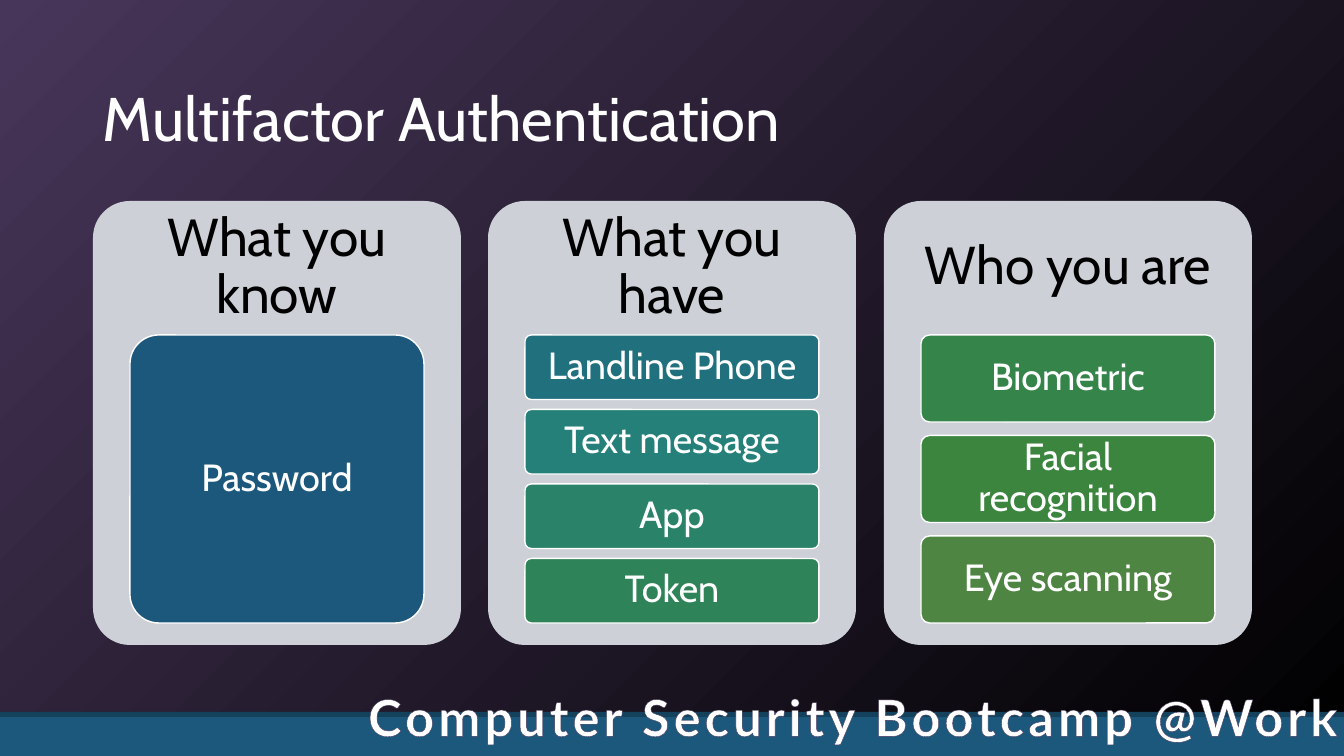
"""Build the Multifactor Authentication slide."""
from lxml import etree
from pptx import Presentation
from pptx.dml.color import RGBColor
from pptx.enum.shapes import MSO_SHAPE as SHAPE
from pptx.enum.text import MSO_ANCHOR as ANCHOR, PP_ALIGN as ALIGN
from pptx.oxml import parse_xml
from pptx.oxml.ns import nsdecls
from pptx.util import Pt

PX = 914400 / 100.8
COLORS = {
    "purple": "48365A", "black": "000000", "white": "FFFFFF",
    "blue": "1B587C", "navy": "14425D", "card": "CDD1D7",
    "cyan": "20707E", "teal": "25807A", "sea": "2A8268", "jade": "2F8358",
    "green": "35844A", "leaf": "3C853F", "olive": "4E8542",
}
CARDS = [
    ("What you know", [("Password", "blue")]),
    ("What you have", [("Landline Phone", "cyan"), ("Text message", "teal"),
                       ("App", "sea"), ("Token", "jade")]),
    ("Who you are", [("Biometric", "green"), ("Facial recognition", "leaf"),
                     ("Eye scanning", "olive")]),
]
CARD_W, CARD_H, CARD_TOP, HEADER_H = 368, 444, 201, 133
ITEM_W, STACK_TOP, STACK_H = 294, 335, 288
GAP_RATIO = 2 / 13


def add_box(kind, box, fill, outlined=False):
    sp = slide.shapes.add_shape(kind, *[round(v * PX) for v in box])
    sp.shadow.inherit = False
    sp.fill.solid()
    sp.fill.fore_color.rgb = RGBColor.from_string(COLORS[fill])
    if outlined:
        sp.line.color.rgb = RGBColor.from_string(COLORS["white"])
        sp.line.width = Pt(1)
    else:
        sp.line.fill.background()
    if kind == SHAPE.ROUNDED_RECTANGLE:
        sp.adjustments[0] = 0.1
    return sp


def add_text(sp, text, size, color="white", align=ALIGN.CENTER,
             inset=(10, 5), font="Cabin", spacing=0.9, anchor=ANCHOR.MIDDLE):
    tf = sp.text_frame
    tf.word_wrap = True
    tf.vertical_anchor = anchor
    tf.margin_left = tf.margin_right = round(inset[0] * PX)
    tf.margin_top = tf.margin_bottom = round(inset[1] * PX)
    p = tf.paragraphs[0]
    p.alignment = align
    p.line_spacing = spacing
    r = p.add_run()
    r.text = text
    r.font.size = Pt(size)
    r.font.name = font
    r.font.color.rgb = RGBColor.from_string(COLORS[color])
    return r


prs = Presentation()
prs.slide_width, prs.slide_height = round(1344 * PX), round(756 * PX)
slide = prs.slides.add_slide(prs.slide_layouts[6])

bg = slide.background.fill
bg.gradient()
bg.gradient_angle = 315
for stop, position, color in zip(bg.gradient_stops, (0, 1), ("purple", "black")):
    stop.position = position
    stop.color.rgb = RGBColor.from_string(COLORS[color])

add_box(SHAPE.RECTANGLE, (0, 714, 1344, 42), "blue")
add_box(SHAPE.RECTANGLE, (0, 712, 1344, 5), "navy")

footer = slide.shapes.add_textbox(*[round(v * PX) for v in (325, 681, 1024, 72)])
r = add_text(footer, "Computer Security Bootcamp @Work", 36, align=ALIGN.RIGHT,
             font="Lato", spacing=1.0, anchor=ANCHOR.TOP)
r.font.bold = True
rPr = r.font._element if hasattr(r.font, "_element") else r._r.get_or_add_rPr()
rPr.set("spc", "300")
outline = parse_xml(f'<a:ln {nsdecls("a")} w="9525"/>')
solid = etree.SubElement(outline, outline.tag.replace("}ln", "}solidFill"))
etree.SubElement(solid, outline.tag.replace("}ln", "}srgbClr"), val=COLORS["purple"])
rPr.insert(0, outline)

title = slide.shapes.add_textbox(*[round(v * PX) for v in (93, 58, 1159, 127)])
add_text(title, "Multifactor Authentication", 44, align=ALIGN.LEFT)

for i, (heading, items) in enumerate(CARDS):
    left = 93 + 791 * i // 2
    add_box(SHAPE.ROUNDED_RECTANGLE, (left, CARD_TOP, CARD_W, CARD_H), "card")
    header = slide.shapes.add_textbox(
        *[round(v * PX) for v in (left, CARD_TOP, CARD_W, HEADER_H)])
    add_text(header, heading, 38, color="black", inset=(16, 16))

    item_h = STACK_H / (len(items) + (len(items) - 1) * GAP_RATIO)
    for j, (label, color) in enumerate(items):
        top = STACK_TOP + j * item_h * (1 + GAP_RATIO)
        sp = add_box(SHAPE.ROUNDED_RECTANGLE,
                     (left + (CARD_W - ITEM_W) // 2, top, ITEM_W, item_h),
                     color, outlined=True)
        add_text(sp, label, 27, inset=(7, 6))

prs.save("out.pptx")
